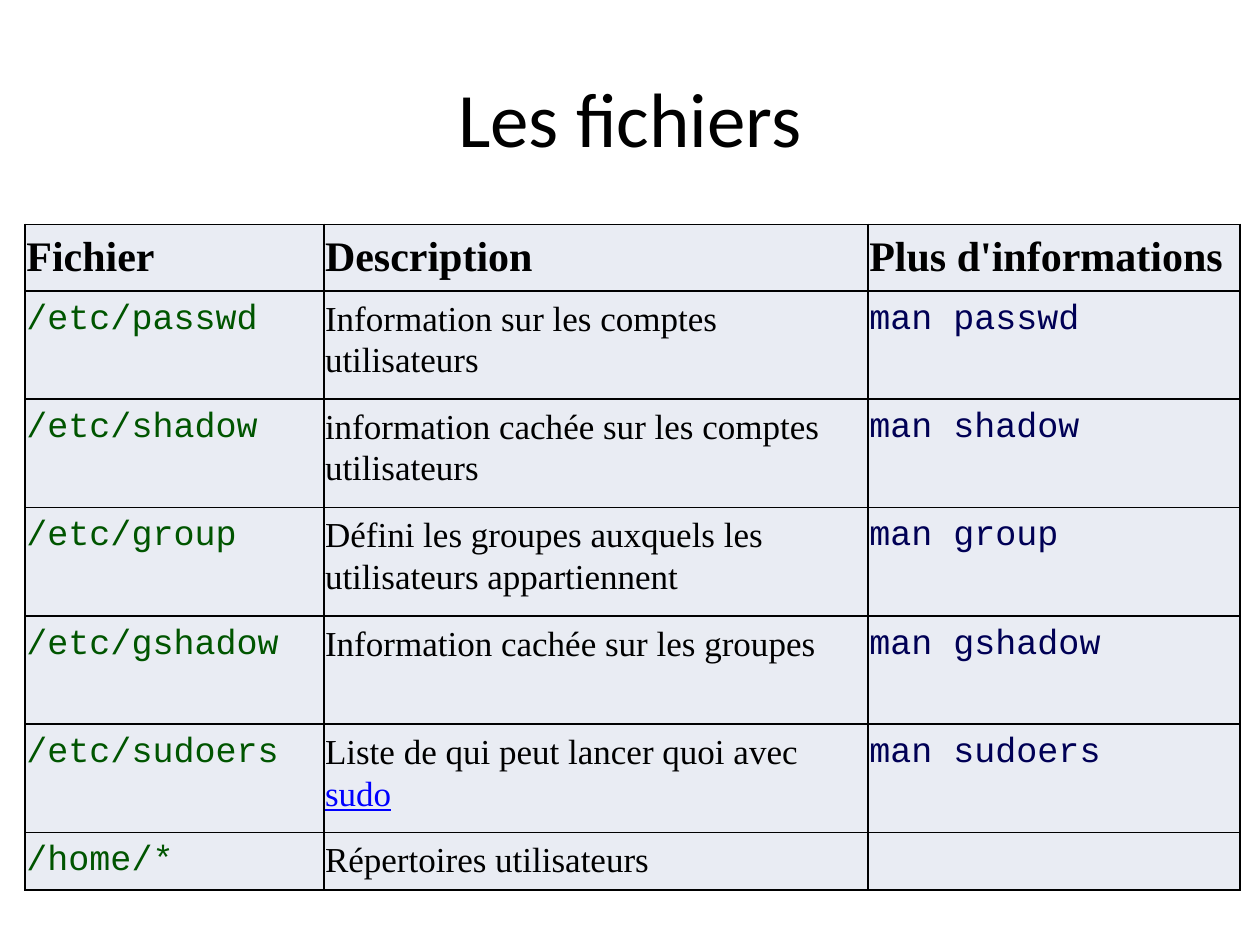
from dataclasses import dataclass

import pptx
import pptx.dml.color
import pptx.enum.text
import pptx.oxml
import pptx.oxml.ns
import pptx.util

Inches = pptx.util.Inches
Pt = pptx.util.Pt


@dataclass(frozen=True)
class TextStyle:
    font: str
    size: float
    color: str
    bold: bool = False


@dataclass(frozen=True)
class Theme:
    title: TextStyle = TextStyle("Calibri", 44, "000000")
    header: TextStyle = TextStyle("Times New Roman", 24, "000000", True)
    file: TextStyle = TextStyle("Courier New", 20, "005500")
    description: TextStyle = TextStyle("Times New Roman", 20, "000000")
    manual: TextStyle = TextStyle("Courier New", 20, "000055")
    link: str = "0000FF"
    cell: str = "E9ECF3"
    border: str = "000000"
    border_width: float = 0.96
    line_spacing: float = 1.07


@dataclass(frozen=True)
class FileEntry:
    file: str
    description: str
    manual: str = ""
    linked_word: str = ""


THEME = Theme()
HEADERS = ("Fichier", "Description", "Plus d'informations")
ENTRIES = (
    FileEntry("/etc/passwd", "Information sur les comptes utilisateurs", "man passwd"),
    FileEntry("/etc/shadow", "information cachée sur les comptes utilisateurs", "man shadow"),
    FileEntry("/etc/group", "Défini les groupes auxquels les utilisateurs appartiennent", "man group"),
    FileEntry("/etc/gshadow", "Information cachée sur les groupes", "man gshadow"),
    FileEntry("/etc/sudoers", "Liste de qui peut lancer quoi avec ", "man sudoers", "sudo"),
    FileEntry("/home/*", "Répertoires utilisateurs"),
)
COLUMN_WIDTHS = (2.37, 4.32, 2.95)
SHORT_ROW, TALL_ROW = 0.45, 0.86


def rgb(color: str) -> pptx.dml.color.RGBColor:
    return pptx.dml.color.RGBColor.from_string(color)


def apply_style(font, style: TextStyle) -> None:
    font.name = style.font
    font.size = Pt(style.size)
    font.bold = style.bold
    font.color.rgb = rgb(style.color)


def add_title(slide, title: str) -> None:
    box = slide.shapes.add_textbox(Inches(0.5), Inches(0.3), Inches(9), Inches(1.25))
    frame = box.text_frame
    frame.word_wrap = True
    frame.vertical_anchor = pptx.enum.text.MSO_ANCHOR.MIDDLE
    heading = frame.paragraphs[0]
    heading.text = title
    heading.alignment = pptx.enum.text.PP_ALIGN.CENTER
    apply_style(heading.font, THEME.title)


def add_borders(cell) -> None:
    properties = cell._tc.get_or_add_tcPr()
    for side in ("lnL", "lnR", "lnT", "lnB"):
        properties.append(pptx.oxml.parse_xml(
            f'<a:{side} {pptx.oxml.ns.nsdecls("a")} w="{Pt(THEME.border_width)}">'
            f'<a:solidFill><a:srgbClr val="{THEME.border}"/></a:solidFill></a:{side}>'
        ))


def fill_cell(cell, text: str, style: TextStyle, linked_word: str = "") -> None:
    cell.margin_left = cell.margin_right = Inches(0.01)
    cell.margin_top = cell.margin_bottom = Inches(0.05)
    add_borders(cell)
    cell.fill.solid()
    cell.fill.fore_color.rgb = rgb(THEME.cell)
    if not text:
        return
    paragraph = cell.text_frame.paragraphs[0]
    paragraph.text = text
    paragraph.line_spacing = THEME.line_spacing
    if not linked_word:
        apply_style(paragraph.font, style)
        return
    link = paragraph.add_run()
    link.text = linked_word
    for run in paragraph.runs:
        apply_style(run.font, style)
    link.font.color.rgb = rgb(THEME.link)
    link.font.underline = True


def add_file_table(slide) -> None:
    row_heights = (SHORT_ROW, *[TALL_ROW] * (len(ENTRIES) - 1), SHORT_ROW)
    table = slide.shapes.add_table(
        len(row_heights), len(COLUMN_WIDTHS), Inches(0.2), Inches(1.78),
        Inches(sum(COLUMN_WIDTHS)), Inches(sum(row_heights)),
    ).table
    table.first_row = table.horz_banding = False
    for column, width in zip(table.columns, COLUMN_WIDTHS):
        column.width = Inches(width)
    for row, height in zip(table.rows, row_heights):
        row.height = Inches(height)
    for column, header in enumerate(HEADERS):
        fill_cell(table.cell(0, column), header, THEME.header)
    for row, entry in enumerate(ENTRIES, start=1):
        fill_cell(table.cell(row, 0), entry.file, THEME.file)
        fill_cell(table.cell(row, 1), entry.description, THEME.description, entry.linked_word)
        fill_cell(table.cell(row, 2), entry.manual, THEME.manual)


def main() -> None:
    presentation = pptx.Presentation()
    presentation.slide_width = Inches(10)
    presentation.slide_height = Inches(7.5)
    slide = presentation.slides.add_slide(presentation.slide_layouts[6])
    add_title(slide, "Les fichiers")
    add_file_table(slide)
    presentation.save("out.pptx")


if __name__ == "__main__":
    main()
